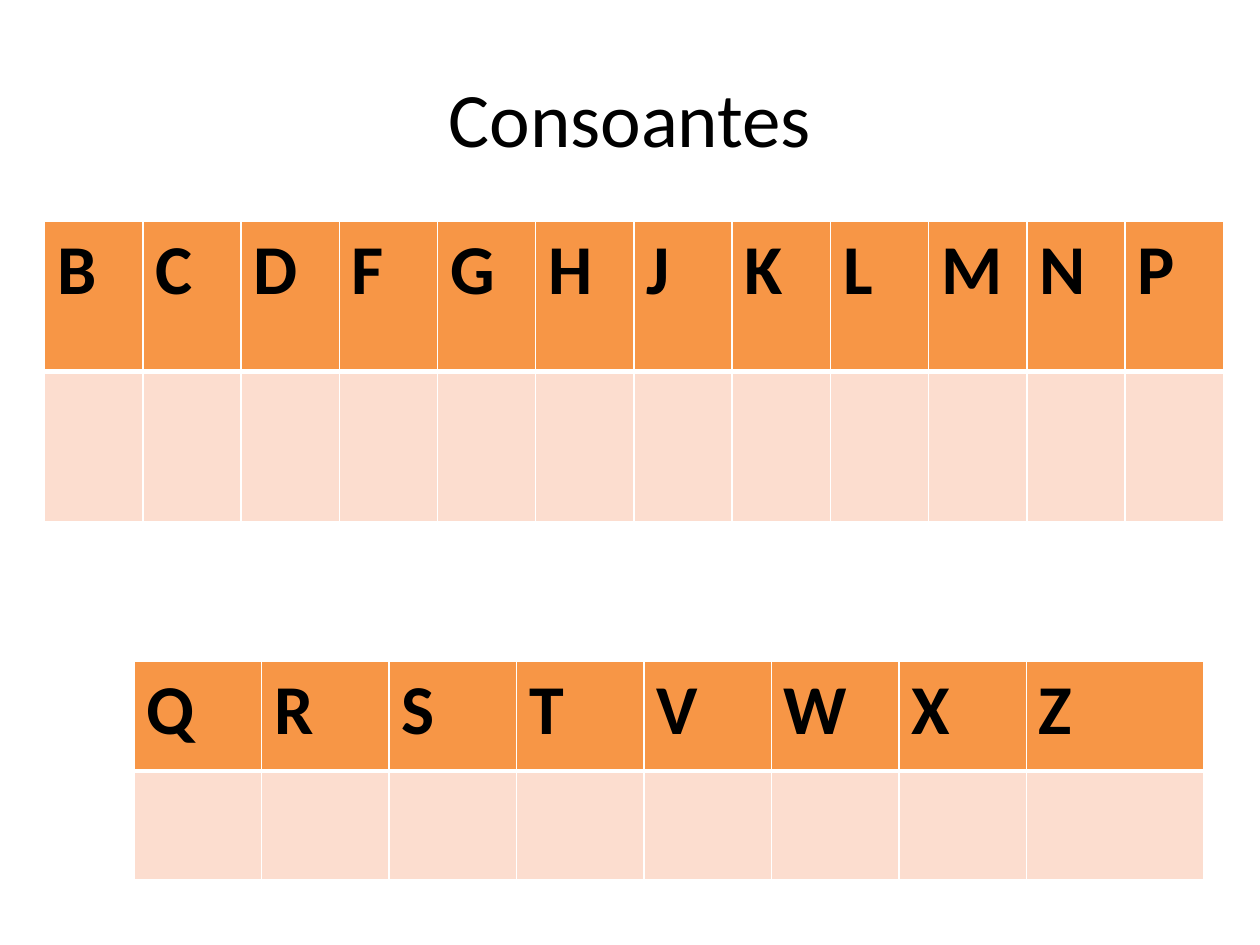
from lxml.etree import SubElement
from pptx import Presentation
from pptx.dml.color import RGBColor
from pptx.enum.text import MSO_ANCHOR, PP_ALIGN
from pptx.oxml.ns import qn
from pptx.util import Cm, Pt

BLACK = RGBColor(0x00, 0x00, 0x00)
WHITE = RGBColor(0xFF, 0xFF, 0xFF)
ORANGE = RGBColor(0xF7, 0x96, 0x46)
PEACH = RGBColor(0xFC, 0xDD, 0xCF)


def style_text(paragraph, size, bold):
    font = paragraph.runs[0].font
    font.name = "Calibri"
    font.size = Pt(size)
    font.bold = bold
    font.color.rgb = BLACK


def add_borders(cell, widths):
    properties = cell._tc.get_or_add_tcPr()
    for side, width in widths.items():
        line = SubElement(properties, qn(f"a:ln{side}"), w=str(Pt(width)))
        fill = SubElement(line, qn("a:solidFill"))
        SubElement(fill, qn("a:srgbClr"), val=str(WHITE))


presentation = Presentation()
presentation.slide_width = Cm(25.4)
presentation.slide_height = Cm(19.05)
slide = presentation.slides.add_slide(presentation.slide_layouts[6])

heading = slide.shapes.add_textbox(Cm(1.27), Cm(0.76), Cm(22.86), Cm(3.18)).text_frame
heading.word_wrap = True
heading.vertical_anchor = MSO_ANCHOR.MIDDLE
heading.text = "Consoantes"
heading.paragraphs[0].alignment = PP_ALIGN.CENTER
style_text(heading.paragraphs[0], 44, False)

letter_groups = [
    ("BCDFGHJKLMNP", 0.9, 4.46, 1.98, 1.98, 3.03),
    ("QRSTVWXZ", 2.7, 13.34, 2.57, 3.58, 2.2),
]
for letters, left, top, column_width, last_width, row_height in letter_groups:
    count = len(letters)
    total_width = column_width * (count - 1) + last_width
    grid = slide.shapes.add_table(
        2, count, Cm(left), Cm(top), Cm(total_width), Cm(2 * row_height)
    ).table
    for row in grid.rows:
        row.height = Cm(row_height)
    for index, letter in enumerate(letters):
        grid.columns[index].width = Cm(last_width if index == count - 1 else column_width)
        letter_cell, blank_cell = grid.cell(0, index), grid.cell(1, index)
        add_borders(letter_cell, {"L": 1, "R": 1, "T": 1, "B": 3})
        add_borders(blank_cell, {"L": 1, "R": 1, "B": 1})
        for cell, color in ((letter_cell, ORANGE), (blank_cell, PEACH)):
            cell.fill.solid()
            cell.fill.fore_color.rgb = color
        letter_cell.text_frame.text = letter
        style_text(letter_cell.text_frame.paragraphs[0], 40, True)

presentation.save("out.pptx")
